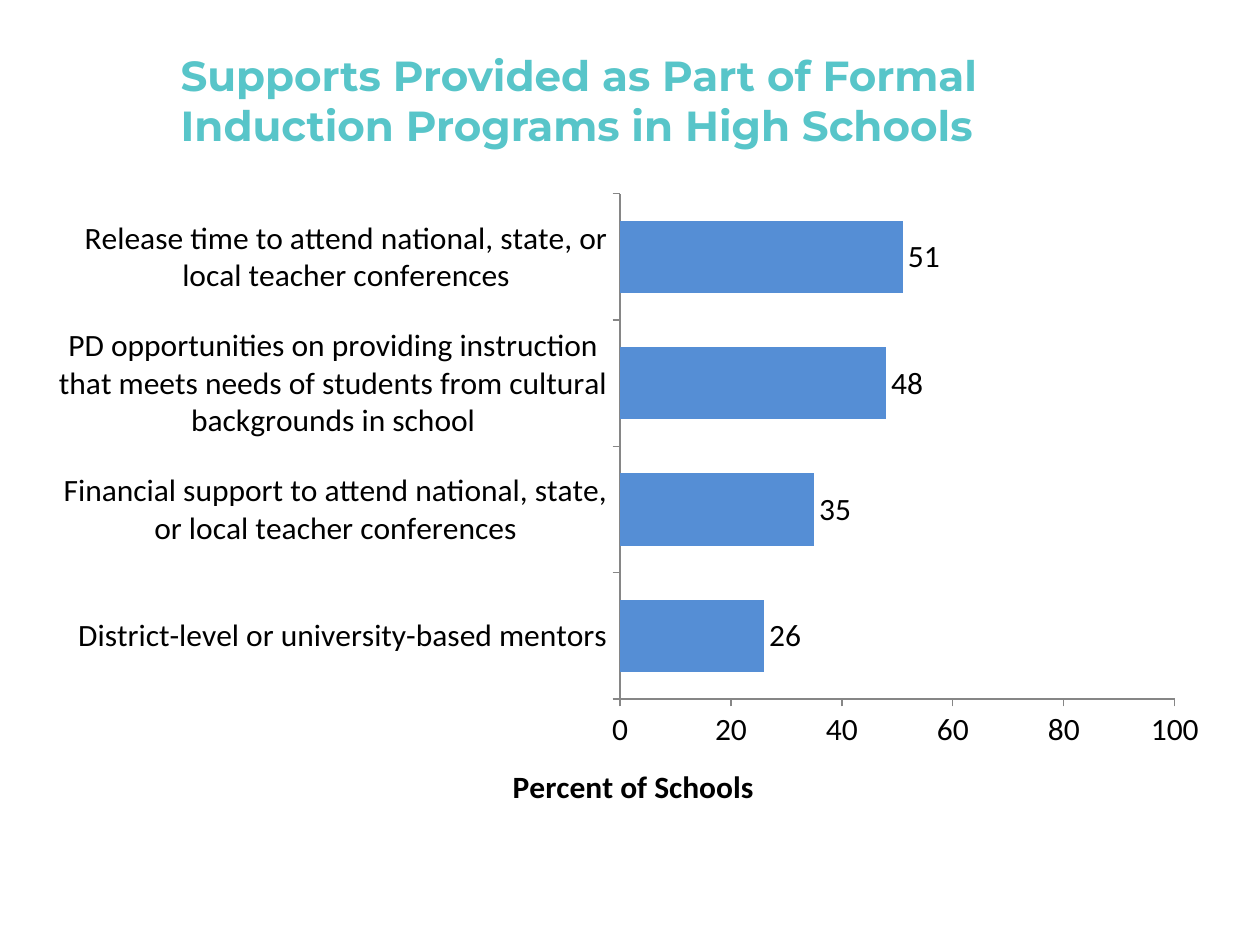
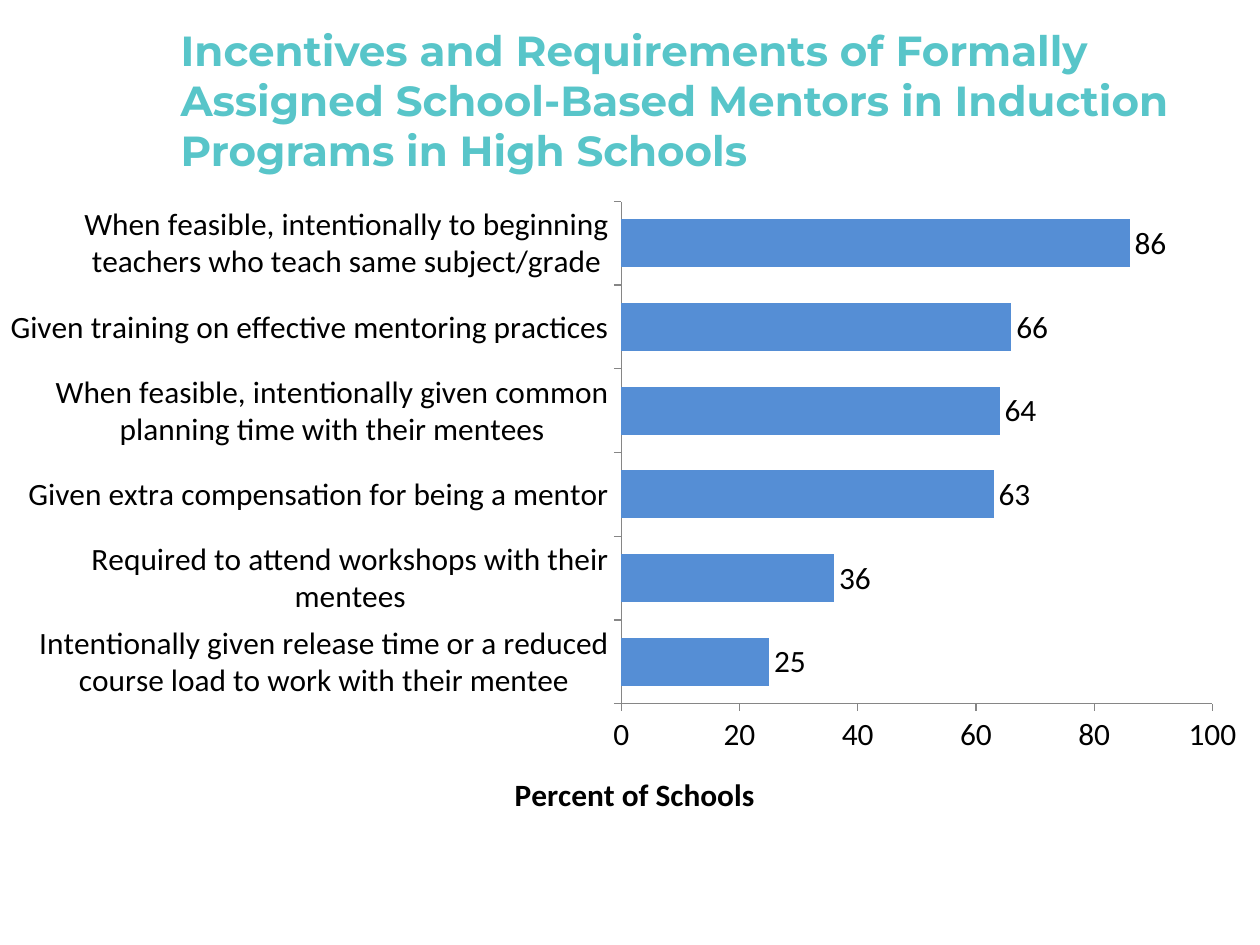
from lxml import etree
from pptx import Presentation
from pptx import util as u
from pptx.chart.data import CategoryChartData
from pptx.dml.color import RGBColor
from pptx.enum import chart as ch
from pptx.enum import text as t
from pptx.oxml.ns import qn

# Content: bars are listed from bottom to top; frames are left, top, width, height
SLIDES = [
    {
        "title": "Supports Provided as Part of Formal Induction Programs in High Schools",
        "frame": (30, 100, 666, 366),
        "plot": {"x": 0.487, "y": 0.03, "w": 0.476, "h": 0.804},
        "axis_title": {"x": 0.39, "y": 0.93},
        "bars": [
            ("District-level or university-based mentors", 26),
            ("Financial support to attend national, state, or local teacher conferences", 35),
            ("PD opportunities on providing instruction that meets needs of students "
             "from cultural backgrounds in school", 48),
            ("Release time to attend national, state, or local teacher conferences", 51),
        ],
    },
    {
        "title": "Incentives and Requirements of Formally Assigned School-Based Mentors "
                 "in Induction Programs in High Schools",
        "frame": (6, 104.4, 708, 366),
        "plot": {"x": 0.491, "y": 0.03, "w": 0.479, "h": 0.799},
        "axis_title": {"x": 0.4, "y": 0.93},
        "bars": [
            ("Intentionally given release time or a reduced course load "
             "to work with their mentee", 25),
            ("Required to attend workshops with their mentees", 36),
            ("Given extra compensation for being a mentor", 63),
            ("When feasible, intentionally given common planning time with their mentees", 64),
            ("Given training on effective mentoring practices", 66),
            ("When feasible, intentionally to beginning teachers who teach "
             "same subject/grade", 86),
        ],
    },
]
AXIS_LABEL = "Percent of Schools"

# Shared style
TEAL = RGBColor(0x58, 0xC5, 0xC9)
BLUE = RGBColor(0x55, 0x8E, 0xD5)
GREY = RGBColor(0x86, 0x86, 0x86)
BLACK = RGBColor(0, 0, 0)
TITLE_FONT, CHART_FONT = "Montserrat", "Calibri"
TITLE_FRAME = (96, 12, 588, 90)


def points(lengths):
    return [u.Pt(length) for length in lengths]


def format_font(font, name=CHART_FONT, size=18, color=BLACK, bold=False):
    font.name, font.size, font.bold = name, u.Pt(size), bold
    font.color.rgb = color


def write_text(frame, text, align=None, **font_format):
    para = frame.paragraphs[0]
    para.alignment = align
    span = para.add_run()
    span.text = text
    format_font(span.font, **font_format)


def place(element, index, fractions, inner=False):
    """Give a chart part a manual layout in fractions of the chart's size."""
    for old in element.findall(qn("c:layout")):
        element.remove(old)
    layout = etree.Element(qn("c:layout"))
    manual = etree.SubElement(layout, qn("c:manualLayout"))
    settings = [("layoutTarget", "inner")] if inner else []
    settings += [(f"{side}Mode", "edge") for side in "xy"]
    settings += fractions.items()
    for tag, value in settings:
        etree.SubElement(manual, qn(f"c:{tag}")).set("val", str(value))
    element.insert(index, layout)


def add_title(page, text):
    box = page.shapes.title
    box.left, box.top, box.width, box.height = points(TITLE_FRAME)
    frame = box.text_frame
    frame.word_wrap = True
    frame.auto_size = t.MSO_AUTO_SIZE.NONE
    frame.vertical_anchor = t.MSO_ANCHOR.MIDDLE
    write_text(frame, text, align=t.PP_ALIGN.LEFT,
               name=TITLE_FONT, size=24, color=TEAL, bold=True)


def add_bar_chart(page, content):
    labels, values = zip(*content["bars"])
    data = CategoryChartData()
    data.categories = labels
    data.add_series("Series 1", values)
    chart = page.shapes.add_chart(
        ch.XL_CHART_TYPE.BAR_CLUSTERED, *points(content["frame"]), data).chart
    format_font(chart.font)
    chart.has_legend = chart.has_title = False

    # Bars and their values
    plot = chart.plots[0]
    plot.gap_width = 75
    plot.vary_by_categories = False
    plot.has_data_labels = True
    plot.data_labels.show_value = True
    plot.data_labels.position = ch.XL_LABEL_POSITION.OUTSIDE_END
    format_font(plot.data_labels.font)
    fill = plot.series[0].format.fill
    fill.solid()
    fill.fore_color.rgb = BLUE

    # Axes
    for axis in (chart.category_axis, chart.value_axis):
        axis.has_major_gridlines = False
        axis.major_tick_mark = ch.XL_TICK_MARK.OUTSIDE
        axis.minor_tick_mark = ch.XL_TICK_MARK.NONE
        axis.format.line.color.rgb = GREY
        axis.format.line.width = u.Pt(0.75)
        format_font(axis.tick_labels.font)
    scale = chart.value_axis
    scale.minimum_scale, scale.maximum_scale, scale.major_unit = 0, 100, 20
    write_text(scale.axis_title.text_frame, AXIS_LABEL, bold=True)

    # Layout inside the chart
    place(scale.axis_title.element, 1, content["axis_title"])
    place(chart.element.find(".//" + qn("c:plotArea")), 0, content["plot"], inner=True)


def main():
    deck = Presentation()
    deck.slide_width, deck.slide_height = points((720, 540))
    for content in SLIDES:
        page = deck.slides.add_slide(deck.slide_layouts[5])
        add_bar_chart(page, content)
        add_title(page, content["title"])
    deck.save("out.pptx")


if __name__ == "__main__":
    main()
